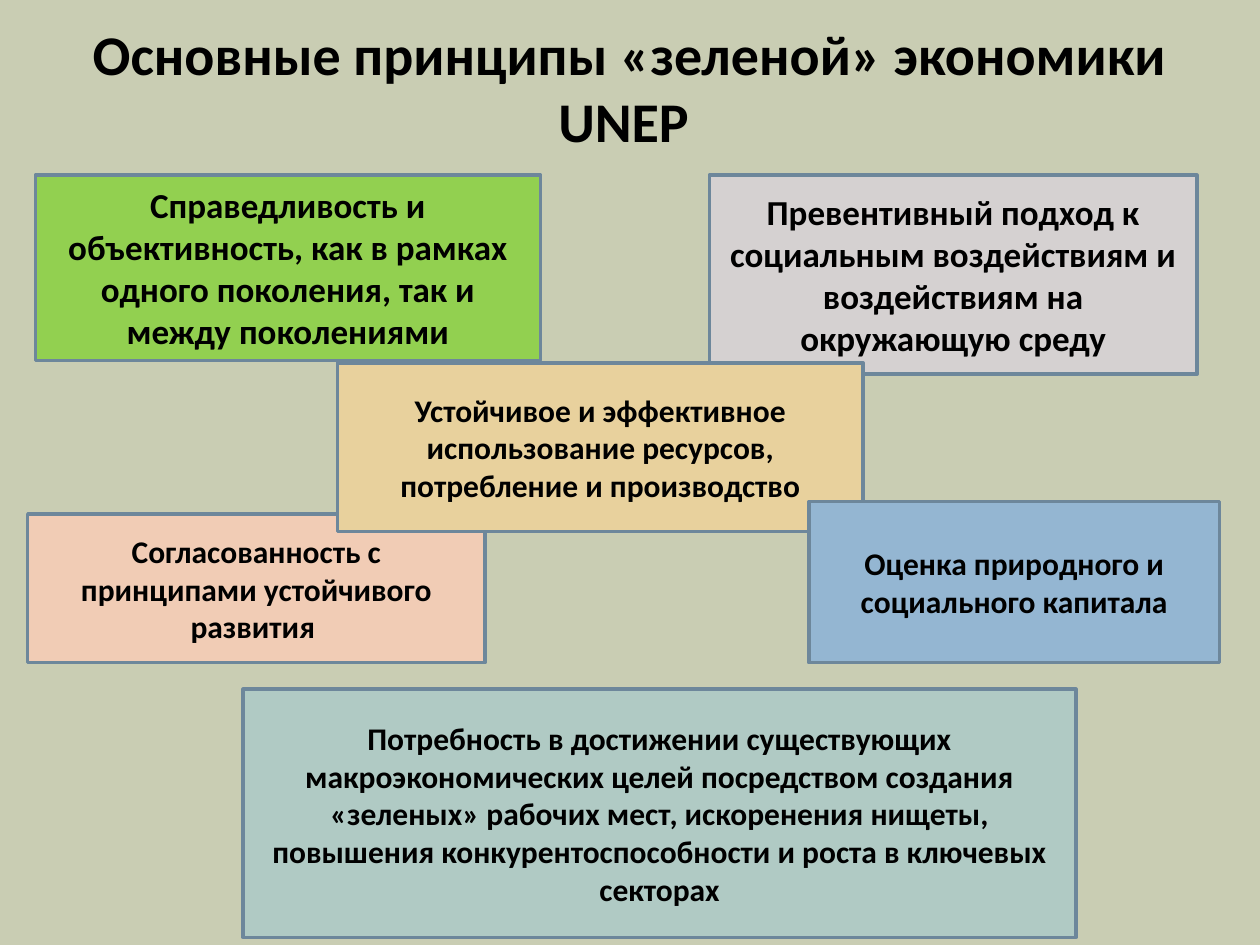
from dataclasses import dataclass

from pptx import Presentation
from pptx.dml.color import RGBColor
from pptx.enum.shapes import MSO_SHAPE as Shape
from pptx.enum.text import MSO_ANCHOR as Anchor, PP_ALIGN as Align
from pptx.util import Inches, Pt


@dataclass(frozen=True)
class Theme:
    font: str = "Calibri"
    background: str = "C9CDB3"
    text: str = "000000"
    border: str = "6D879B"
    gray: str = "D5D1D1"
    green: str = "92D050"
    peach: str = "F1CCB5"
    sand: str = "E8D19D"
    blue: str = "94B6D2"
    teal: str = "B0CAC4"
    title_size: int = 32
    large: int = 20
    normal: int = 18
    border_width: int = 2


class SlideBuilder:
    def __init__(self, prs, theme):
        self.theme = theme
        self.s = prs.slides.add_slide(prs.slide_layouts[6])
        fill = self.s.background.fill
        fill.solid()
        fill.fore_color.rgb = RGBColor.from_string(theme.background)

    def _write(self, sp, text, size, space_before=0):
        tf = sp.text_frame
        tf.word_wrap = True
        tf.vertical_anchor = Anchor.MIDDLE
        tf.text = text
        p = tf.paragraphs[0]
        p.alignment = Align.CENTER
        p.space_before = Pt(space_before)
        font = p.runs[0].font
        font.name, font.size, font.bold = self.theme.font, Pt(size), True
        font.color.rgb = RGBColor.from_string(self.theme.text)

    def title(self, text, box):
        sp = self.s.shapes.add_textbox(*map(Inches, box))
        self._write(sp, text, self.theme.title_size)

    def principle(self, text, box, color, size, space_before=0):
        sp = self.s.shapes.add_shape(Shape.RECTANGLE, *map(Inches, box))
        sp.shadow.inherit = False
        sp.fill.solid()
        sp.fill.fore_color.rgb = RGBColor.from_string(color)
        sp.line.color.rgb = RGBColor.from_string(self.theme.border)
        sp.line.width = Pt(self.theme.border_width)
        self._write(sp, text, size, space_before)


def main():
    prs = Presentation()
    prs.slide_width, prs.slide_height = Inches(10), Inches(7.5)
    theme = Theme()
    slide = SlideBuilder(prs, theme)

    # Title; the trailing space keeps the last line slightly left of centre
    slide.title("Основные принципы «зеленой» экономики UNEP ", (0.5, 0.3, 9, 0.77))

    # Upper pair in larger type
    slide.principle(
        "Превентивный подход к социальным воздействиям и воздействиям на окружающую среду",
        (5.63, 1.39, 3.87, 1.58), theme.gray, theme.large, space_before=4)
    slide.principle(
        "Справедливость и объективность, как в рамках одного поколения, так и между поколениями",
        (0.28, 1.39, 4.01, 1.47), theme.green, theme.large)

    # Remaining principles, overlapping from back to front
    principles = [
        ("Согласованность с принципами устойчивого развития ",
         (0.22, 4.08, 3.63, 1.18), theme.peach),
        ("Устойчивое и эффективное использование ресурсов, потребление и производство",
         (2.68, 2.88, 4.17, 1.34), theme.sand),
        ("Оценка природного и социального капитала",
         (6.42, 3.98, 3.26, 1.28), theme.blue),
        ("Потребность в достижении существующих макроэкономических целей "
         "посредством создания «зеленых» рабочих мест, искоренения нищеты, "
         "повышения конкурентоспособности и роста в ключевых секторах",
         (1.93, 5.47, 6.61, 1.97), theme.teal),
    ]
    for text, box, color in principles:
        slide.principle(text, box, color, theme.normal)

    prs.save("out.pptx")


if __name__ == "__main__":
    main()
